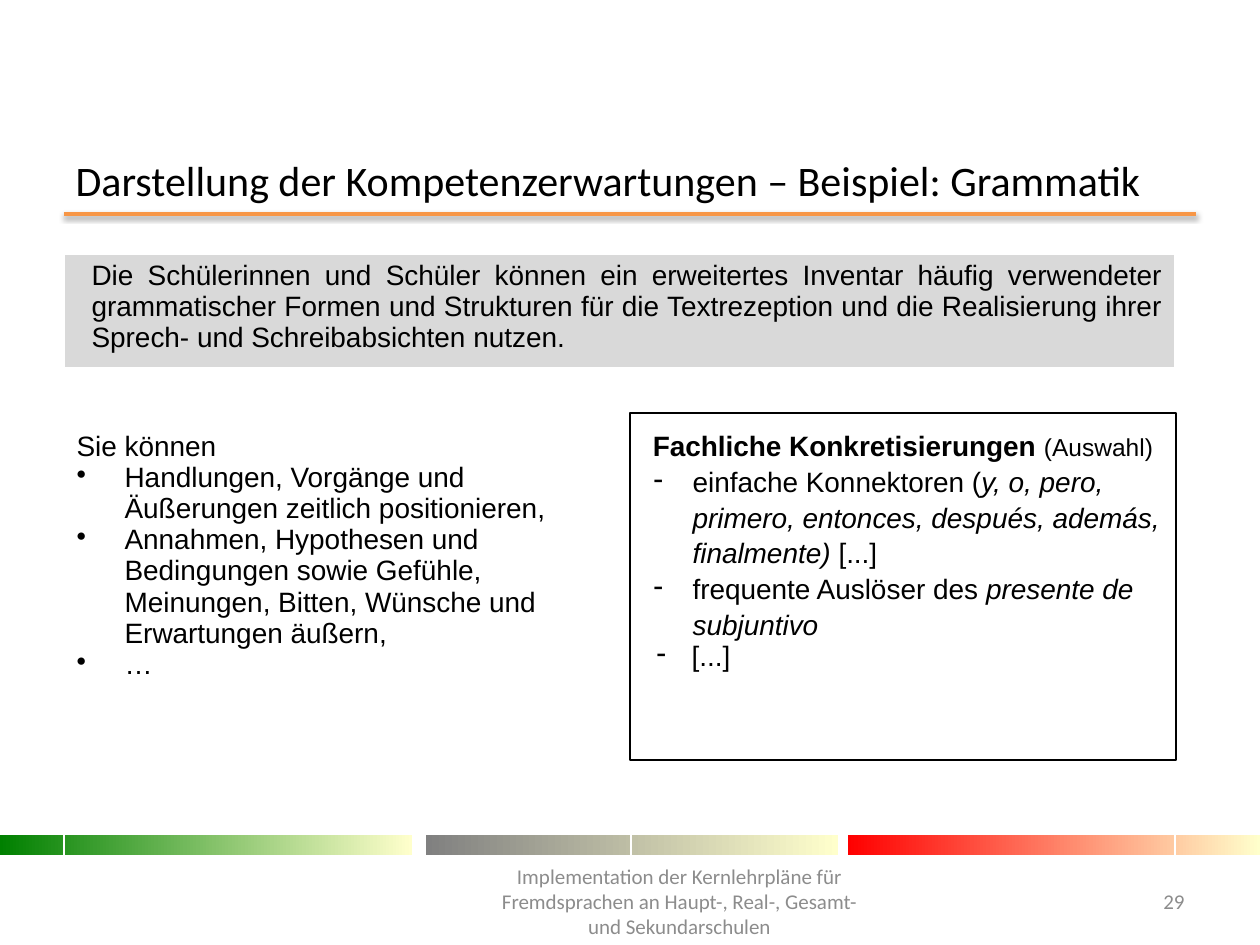
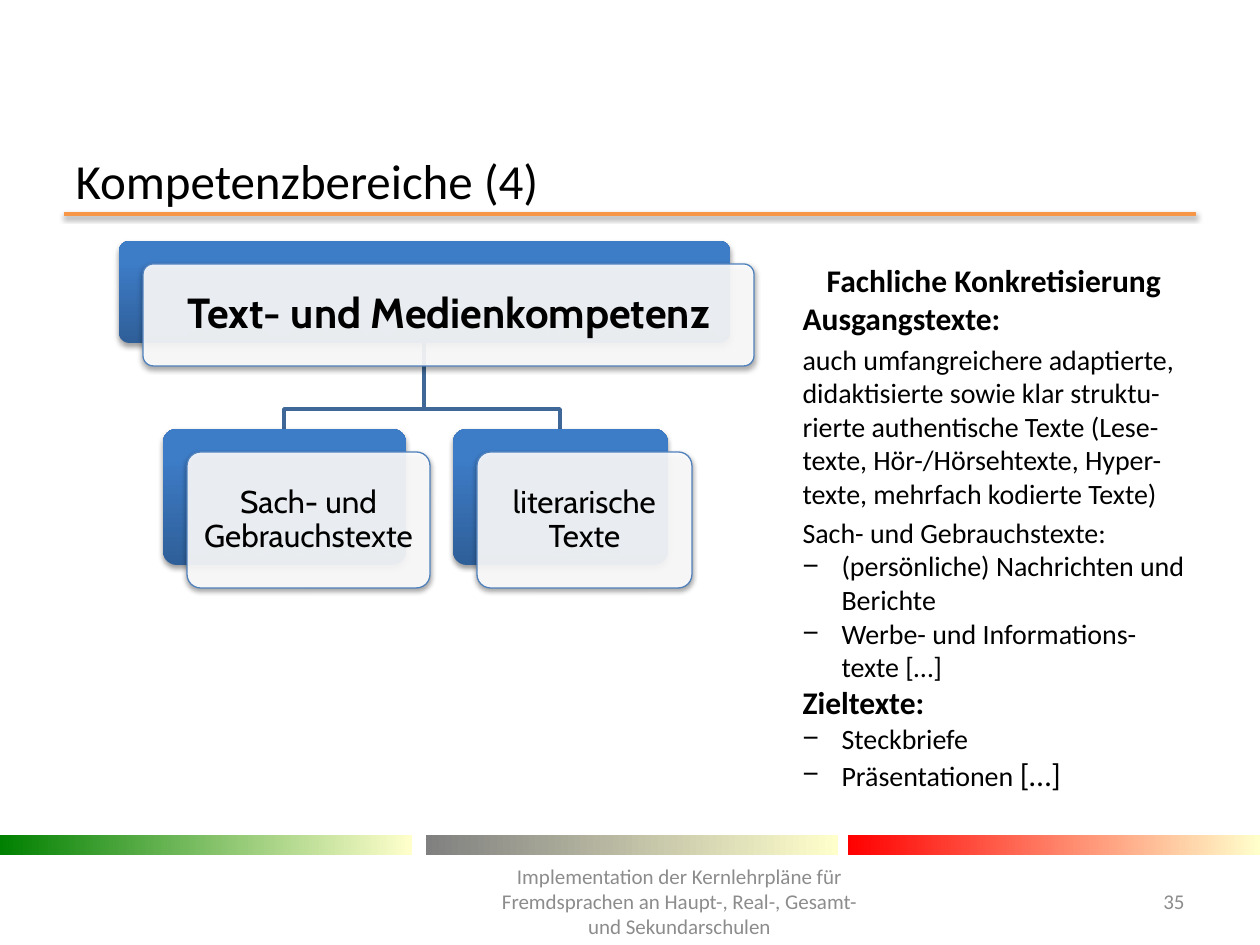
"""Build two slides on competence areas in language teaching."""
from dataclasses import dataclass
from typing import Any, Optional

from lxml.etree import SubElement as Sub
from pptx import Presentation
from pptx.dml.color import RGBColor as Rgb
from pptx.enum.shapes import MSO_CONNECTOR as Link, MSO_SHAPE as Kind
from pptx.enum.text import MSO_ANCHOR as Anchor, MSO_AUTO_SIZE as Fit, PP_ALIGN as Align
from pptx.oxml.ns import qn
from pptx.util import Emu, Pt

SCALE = 914400 / 126
BLACK, WHITE, GREY, PALE = "000000", "FFFFFF", "8C8C8C", "FFFFCC"
ORANGE, BLUE, DARK, EDGE, JOIN = "F79646", "3D7CC7", "2F5F99", "4F81BD", "3F6797"
SHADE = "D9D9D9"
FOOTER = ("Implementation der Kernlehrpläne für Fremdsprachen "
          "an Haupt-, Real-, Gesamt- und Sekundarschulen")


@dataclass
class Box:
    x: int
    y: int
    w: int
    h: int

    @property
    def mid(self) -> int:
        return self.x + self.w // 2

    def move(self, dx: int, dy: int) -> "Box":
        return Box(self.x + dx, self.y + dy, self.w, self.h)

    def emu(self) -> tuple[Emu, ...]:
        return tuple(px(n) for n in (self.x, self.y, self.w, self.h))


@dataclass
class Run:
    text: str
    size: int = 16
    bold: bool = False
    slant: bool = False


@dataclass
class Para:
    runs: list[Run]
    align: Any = Align.LEFT
    mark: str = ""
    left: int = 0
    hang: int = 0
    gap: int = 0
    space: float = 1.0


@dataclass
class Band:
    x: int
    tone: str


@dataclass
class Card:
    text: str
    box: Box
    size: int = 18
    bold: bool = False


BANDS = [Band(0, "008000"), Band(426, "808080"), Band(848, "FF0000")]
ROOT = Card("Text- und Medienkompetenz", Box(119, 241, 611, 102), 24, True)
LEAVES = [
    Card("Sach- und Gebrauchstexte", Box(163, 429, 243, 136)),
    Card("literarische Texte", Box(453, 429, 215, 136)),
]


def px(n: int) -> Emu:
    return Emu(round(n * SCALE))


def tint(code: str) -> Rgb:
    return Rgb.from_string(code)


def blend(fill: Any, first: str, last: str, angle: int, end: float = 1) -> None:
    fill.gradient()
    fill.gradient_angle = angle
    for stop, code, place in zip(fill.gradient_stops, (first, last), (0, end)):
        stop.position = place
        stop.color.rgb = tint(code)


def cast(shape: Any) -> None:
    props = shape._element.spPr
    fx = props.find(qn("a:effectLst"))
    if fx is None:
        fx = Sub(props, qn("a:effectLst"))
    drop = Sub(fx, qn("a:outerShdw"), blurRad=str(Pt(3.1)), dist=str(Pt(1.6)),
               dir="5400000", rotWithShape="0")
    tone = Sub(drop, qn("a:srgbClr"), val=BLACK)
    Sub(tone, qn("a:alpha"), val="38000")


def style(run: Any, font: str, code: str, spec: Run) -> None:
    run.font.name, run.font.size = font, Pt(spec.size)
    run.font.bold, run.font.italic = spec.bold, spec.slant
    run.font.color.rgb = tint(code)


def write(frame: Any, paras: list[Para], font: str, code: str = BLACK) -> None:
    frame.word_wrap = True
    for i, para in enumerate(paras):
        line = frame.paragraphs[0] if i == 0 else frame.add_paragraph()
        line.alignment, line.line_spacing = para.align, para.space
        line.space_before = Pt(para.gap)
        props = line._p.get_or_add_pPr()
        props.set("marL", str(px(para.left)))
        props.set("indent", str(px(-para.hang)))
        if para.mark:
            Sub(props, qn("a:buChar"), char=para.mark)
        else:
            Sub(props, qn("a:buNone"))
        for spec in para.runs:
            run = line.add_run()
            run.text = spec.text
            style(run, font, code, spec)


def shape(slide: Any, kind: Any, box: Box) -> Any:
    item = slide.shapes.add_shape(kind, *box.emu())
    item.shadow.inherit = False
    return item


def note(slide: Any, box: Box, text: str, align: Any) -> None:
    frame = slide.shapes.add_textbox(*box.emu()).text_frame
    frame.vertical_anchor = Anchor.MIDDLE
    write(frame, [Para([Run(text, 12)], align)], "Calibri", GREY)


def start(deck: Any, layout: int, title: str, size: int, page: str) -> Any:
    slide = deck.slides.add_slide(deck.slide_layouts[layout])
    rule = slide.shapes.add_connector(Link.STRAIGHT, px(64), px(214), px(1196), px(214))
    rule.line.color.rgb, rule.line.width = tint(ORANGE), Pt(2)
    cast(rule)
    for band in BANDS:
        bar = shape(slide, Kind.RECTANGLE, Box(band.x, 835, 412, 20))
        blend(bar.fill, band.tone, PALE, 0)
        bar.line.fill.background()
    head = slide.shapes.title
    head.left, head.top, head.width, head.height = Box(63, 155, 1134, 49).emu()
    frame = head.text_frame
    frame.text = title
    frame.auto_size, frame.vertical_anchor = Fit.NONE, Anchor.MIDDLE
    frame.paragraphs[0].alignment = Align.LEFT
    style(frame.paragraphs[0].runs[0], "Calibri", BLACK, Run(title, size))
    note(slide, Box(481, 876, 397, 50), FOOTER, Align.CENTER)
    note(slide, Box(1116, 876, 81, 50), page, Align.RIGHT)
    return slide


def grammar(deck: Any) -> None:
    slide = start(deck, 5, "Darstellung der Kompetenzerwartungen – Beispiel: Grammatik",
                  24, "29")
    grid = slide.shapes.add_table(3, 2, *Box(64, 254, 1111, 627).emu()).table
    grid.first_row = grid.horz_banding = False
    for col, wide in zip(grid.columns, (567, 544)):
        col.width = px(wide)
    for row, high in zip(grid.rows, (106, 53, 468)):
        row.height = px(high)
    for i, code in enumerate((SHADE, WHITE)):
        grid.cell(i, 0).merge(grid.cell(i, 1))
        for cell in grid.rows[i].cells:
            cell.fill.solid()
            cell.fill.fore_color.rgb = tint(code)
    for cell in grid.rows[2].cells:
        cell.fill.background()

    goal = Run("Die Schülerinnen und Schüler können ein erweitertes Inventar häufig "
               "verwendeter grammatischer Formen und Strukturen für die Textrezeption und "
               "die Realisierung ihrer Sprech- und Schreibabsichten nutzen.")
    write(grid.cell(0, 0).text_frame, [Para([goal], Align.JUSTIFY, left=15)], "Arial")
    skills = [
        "Handlungen, Vorgänge und Äußerungen zeitlich positionieren,",
        "Annahmen, Hypothesen und Bedingungen sowie Gefühle, Meinungen, Bitten, "
        "Wünsche und Erwartungen äußern,",
        "…",
    ]
    write(grid.cell(2, 0).text_frame,
          [Para([Run("Sie können")], space=1.15)]
          + [Para([Run(text)], mark="•", left=48, hang=48) for text in skills], "Arial")
    write(grid.cell(2, 1).text_frame, [
        Para([Run("Fachliche Konkretisierungen ", bold=True), Run("(Auswahl)", 14)],
             Align.CENTER, space=1.15),
        Para([Run("einfache Konnektoren ("),
              Run("y, o, pero, primero, entonces, después, además, finalmente) ",
                  slant=True),
              Run("[...]")], mark="-", left=49, hang=39, space=1.15),
        Para([Run("frequente Auslöser des "), Run("presente de subjuntivo", slant=True)],
             mark="-", left=49, hang=39, space=1.15),
        Para([Run("[...]")], mark="-", left=48, hang=35),
    ], "Arial")
    frame = shape(slide, Kind.RECTANGLE, Box(630, 413, 546, 347))
    frame.fill.background()
    frame.line.color.rgb, frame.line.width = tint(BLACK), Pt(1)


def draw(slide: Any, card: Card) -> None:
    back = shape(slide, Kind.ROUNDED_RECTANGLE, card.box)
    front = shape(slide, Kind.ROUNDED_RECTANGLE, card.box.move(24, 23))
    blend(back.fill, DARK, BLUE, 90, 0.8)
    back.line.fill.background()
    front.fill.solid()
    front.fill.fore_color.rgb = tint(WHITE)
    tone = front._element.spPr.find(qn("a:solidFill"))[0]
    Sub(tone, qn("a:alpha"), val="90000")
    front.line.color.rgb, front.line.width = tint(EDGE), Pt(0.75)
    for item in (back, front):
        item.adjustments[0] = 0.1
        cast(item)
    frame = front.text_frame
    frame.vertical_anchor = Anchor.MIDDLE
    frame.margin_left = frame.margin_right = px(8)
    write(frame, [Para([Run(card.text, card.size, card.bold)], Align.CENTER, space=0.9)],
          "Cabin")


def join(slide: Any, top: Box, low: Box) -> None:
    base = top.y + top.h
    path = slide.shapes.build_freeform(top.mid, base, SCALE)
    path.add_line_segments([(top.mid, 409), (low.mid, 409), (low.mid, low.y)], close=False)
    line = path.convert_to_shape()
    line.shadow.inherit = False
    line.fill.background()
    line.line.color.rgb, line.line.width = tint(JOIN), Pt(2)


def media(deck: Any) -> None:
    slide = start(deck, 1, "Kompetenzbereiche (4)", 28, "35")
    for leaf in LEAVES:
        join(slide, ROOT.box, leaf.box)
    for card in [ROOT, *LEAVES]:
        draw(slide, card)
    body = slide.placeholders[1]
    body.left, body.top, body.width, body.height = Box(790, 255, 408, 585).emu()
    body.text_frame.auto_size = Fit.NONE

    def dash(*runs: Run) -> Para:
        return Para(list(runs), mark="−", left=39, hang=39)

    write(body.text_frame, [
        Para([Run("Fachliche Konkretisierung", 18, True)], Align.CENTER),
        Para([Run("Ausgangstexte:", 18, True)]),
        Para([Run("auch umfangreichere adaptierte, didaktisierte sowie klar "
                  "struktu-rierte authentische Texte (Lese-texte, Hör-/Hörsehtexte, "
                  "Hyper-texte, mehrfach kodierte Texte)")], gap=3),
        Para([Run("Sach- und Gebrauchstexte:")], gap=3),
        dash(Run("(persönliche) Nachrichten und Berichte")),
        dash(Run("Werbe- und Informations-texte […]")),
        Para([Run("Zieltexte:", 18, True)]),
        dash(Run("Steckbriefe")),
        dash(Run("Präsentationen "), Run("[…]", 18)),
    ], "Calibri")


def main() -> None:
    deck = Presentation()
    deck.slide_width, deck.slide_height = px(1260), px(945)
    grammar(deck)
    media(deck)
    deck.save("out.pptx")


if __name__ == "__main__":
    main()
